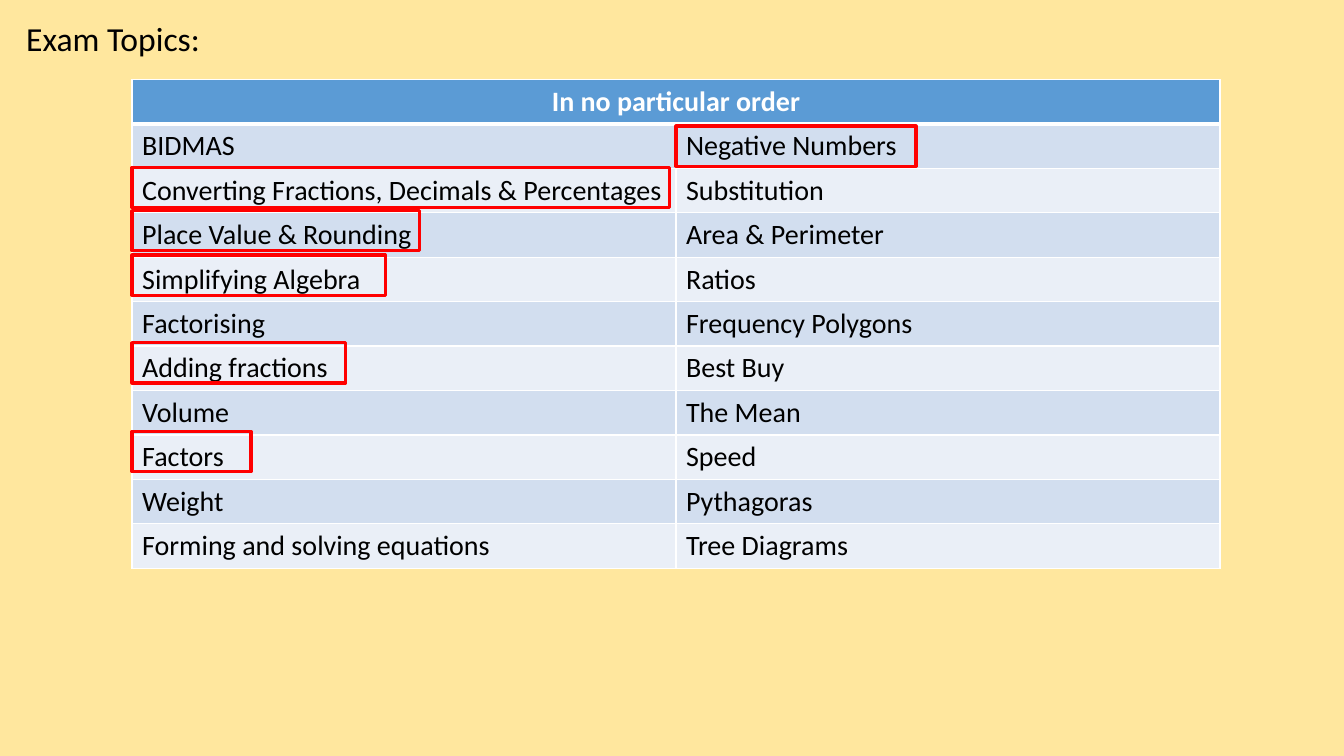
from pptx import Presentation
from pptx.dml.color import RGBColor
from pptx.enum import shapes, text
from pptx.oxml import parse_xml
from pptx.oxml.ns import nsdecls
from pptx.util import Inches, Pt

TITLE = "Exam Topics:"
HEAD = "In no particular order"
TOPICS = [
    ("BIDMAS", "Negative Numbers"),
    ("Converting Fractions, Decimals & Percentages", "Substitution"),
    ("Place Value & Rounding", "Area & Perimeter"),
    ("Simplifying Algebra", "Ratios"),
    ("Factorising", "Frequency Polygons"),
    ("Adding fractions", "Best Buy"),
    ("Volume", "The Mean"),
    ("Factors", "Speed"),
    ("Weight", "Pythagoras"),
    ("Forming and solving equations", "Tree Diagrams"),
]
# Red frames: column, top, width
FRAMES = [(0, 1.66, 5.33), (0, 2.09, 2.85), (0, 2.53, 2.51),
          (0, 3.4, 2.12), (0, 4.28, 1.18), (1, 1.25, 2.38)]
BANDS = ["D2DEEF", "EAEFF7"]
LEFT, TOP, WIDE, HIGH = 1.31, 0.79, 10.79, 4.77
LEFT_AL, MID_AL = text.PP_ALIGN.LEFT, text.PP_ALIGN.CENTER


def paint(fmt, color):
    fmt.solid()
    fmt.fore_color.rgb = RGBColor.from_string(color)


def write(frame, words, size=20, color="000000", bold=False, align=LEFT_AL):
    par = frame.paragraphs[0]
    par.alignment = align
    run = par.add_run()
    run.text = words
    font = run.font
    font.name, font.size, font.bold = "Calibri", Pt(size), bold
    font.color.rgb = RGBColor.from_string(color)


def edge(cell, **widths):
    """Draw white cell borders; sides not named are 1 point wide."""
    props = cell._tc.get_or_add_tcPr()
    for spot, side in enumerate("LRTB"):
        wide = Pt(widths.get(side, 1))
        props.insert(spot, parse_xml(
            f'<a:ln{side} {nsdecls("a")} w="{wide}"><a:solidFill>'
            f'<a:srgbClr val="FFFFFF"/></a:solidFill></a:ln{side}>'))


def main():
    prs = Presentation()
    prs.slide_width, prs.slide_height = Inches(13.33), Inches(7.5)
    slide = prs.slides.add_slide(prs.slide_layouts[5])
    paint(slide.background.fill, "FFE79E")

    title = slide.shapes.title
    title.left, title.top = Inches(0.16), Inches(0.13)
    title.width, title.height = Inches(4), Inches(0.5)
    frame = title.text_frame
    frame.auto_size = text.MSO_AUTO_SIZE.NONE
    frame.vertical_anchor = text.MSO_ANCHOR.TOP
    write(frame, TITLE, size=24)

    rows = len(TOPICS) + 1
    table = slide.shapes.add_table(rows, 2, Inches(LEFT), Inches(TOP),
                                   Inches(WIDE), Inches(HIGH)).table
    table.horz_banding = False
    for col in table.columns:
        col.width = Inches(WIDE / 2)
    for row in table.rows:
        row.height = Inches(HIGH / rows)

    head = table.cell(0, 0)
    head.merge(table.cell(0, 1))
    write(head.text_frame, HEAD, color="FFFFFF", bold=True, align=MID_AL)
    for cell in table.rows[0].cells:
        paint(cell.fill, "5B9BD5")
        edge(cell, B=3)
    for r, pair in enumerate(TOPICS, 1):
        for c, topic in enumerate(pair):
            cell = table.cell(r, c)
            write(cell.text_frame, topic)
            paint(cell.fill, BANDS[(r - 1) % 2])
            edge(cell, T=3 if r == 1 else 1)

    for col, top, wide in FRAMES:
        box = slide.shapes.add_shape(
            shapes.MSO_SHAPE.RECTANGLE, Inches(LEFT + col * WIDE / 2),
            Inches(top), Inches(wide), Inches(0.4))
        box.shadow.inherit = False
        box.fill.background()
        paint(box.line.fill, "FF0000")
        box.line.width = Pt(2.25)

    prs.save("out.pptx")


if __name__ == "__main__":
    main()
